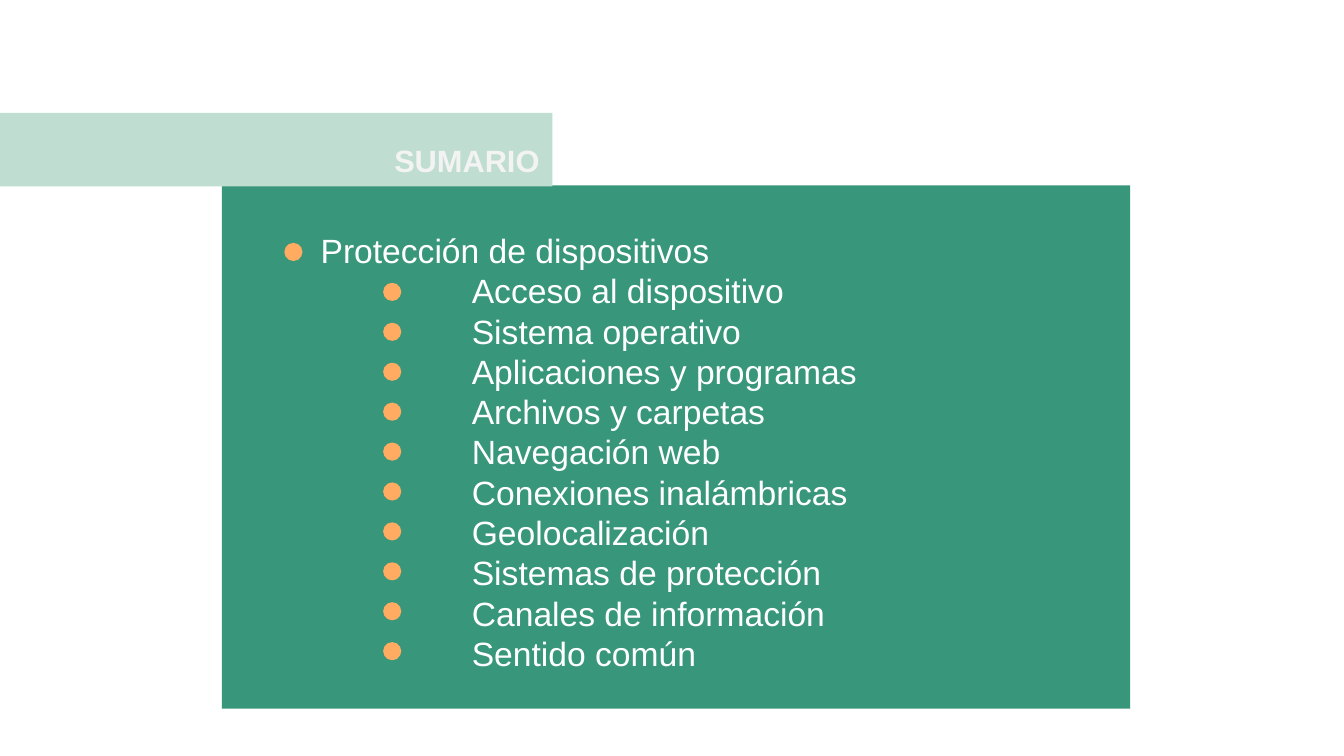
from pptx import Presentation
from pptx import util as u
from pptx.dml.color import RGBColor
from pptx.enum import shapes, text

# Content
TITLE = "SUMARIO"
TOPIC = "Protección de dispositivos"
ITEMS = [
    "Acceso al dispositivo",
    "Sistema operativo",
    "Aplicaciones y programas",
    "Archivos y carpetas",
    "Navegación web",
    "Conexiones inalámbricas",
    "Geolocalización",
    "Sistemas de protección",
    "Canales de información",
    "Sentido común",
]

# Colours
GREEN = RGBColor(0x38, 0x96, 0x7B)
MINT = RGBColor(0xBF, 0xDD, 0xD1)
AMBER = RGBColor(0xFF, 0xAB, 0x61)
WHITE = RGBColor(0xFF, 0xFF, 0xFF)
PALE = RGBColor(0xF3, 0xF3, 0xF3)

# Layout in inches: bullet columns, first row and row pitch
COLS = (2.82, 3.8)
TOP, PITCH, DOT = 2.41, 0.396, 0.18
INDENTS = (1, 2.5)
PAD = 0.13

deck = Presentation()
deck.slide_width, deck.slide_height = u.Inches(13.33), u.Inches(7.5)
slide = deck.slides.add_slide(deck.slide_layouts[6])


def add_form(kind, box, fill):
    form = slide.shapes.add_shape(kind, *map(u.Inches, box))
    form.shadow.inherit = False
    form.fill.solid()
    form.fill.fore_color.rgb = fill
    form.line.fill.background()


def add_text(lines, box, size=24, color=WHITE, bold=False, pitch=None,
             align=text.PP_ALIGN.LEFT, anchor=text.MSO_ANCHOR.TOP):
    """Write (indent, words) lines in one text box."""
    frame = slide.shapes.add_textbox(*map(u.Inches, box)).text_frame
    frame.word_wrap = True
    frame.vertical_anchor = anchor
    frame.margin_left = frame.margin_right = u.Inches(PAD)
    frame.margin_top = frame.margin_bottom = u.Inches(PAD)
    for i, (indent, words) in enumerate(lines):
        para = frame.add_paragraph() if i else frame.paragraphs[0]
        props = para._p.get_or_add_pPr()
        props.set("marL", str(u.Inches(indent)))
        props.set("indent", "0")
        para.alignment = align
        if pitch:
            para.line_spacing = u.Pt(pitch)
        run = para.add_run()
        run.text = words
        run.font.name = "Arial"
        run.font.size = u.Pt(size)
        run.font.bold = bold
        run.font.color.rgb = color


# Panel and title band
add_form(shapes.MSO_SHAPE.RECTANGLE, (2.2, 1.84, 9.01, 5.19), GREEN)
add_form(shapes.MSO_SHAPE.RECTANGLE, (0, 1.12, 5.48, 0.73), MINT)
add_text([(0, TITLE)], (0, 1.12, 5.48, 0.78), size=22, color=PALE, bold=True,
         align=text.PP_ALIGN.RIGHT, anchor=text.MSO_ANCHOR.BOTTOM)

# Topic with its indented items
lines = [(INDENTS[0], TOPIC)] + [(INDENTS[1], item) for item in ITEMS]
add_text(lines, (2.05, 2.15, 8.45, 4.66), pitch=28.8)

# One dot beside each line
for row in range(len(lines)):
    left = COLS[min(row, 1)]
    add_form(shapes.MSO_SHAPE.OVAL, (left, TOP + row * PITCH, DOT, DOT), AMBER)

deck.save("out.pptx")
